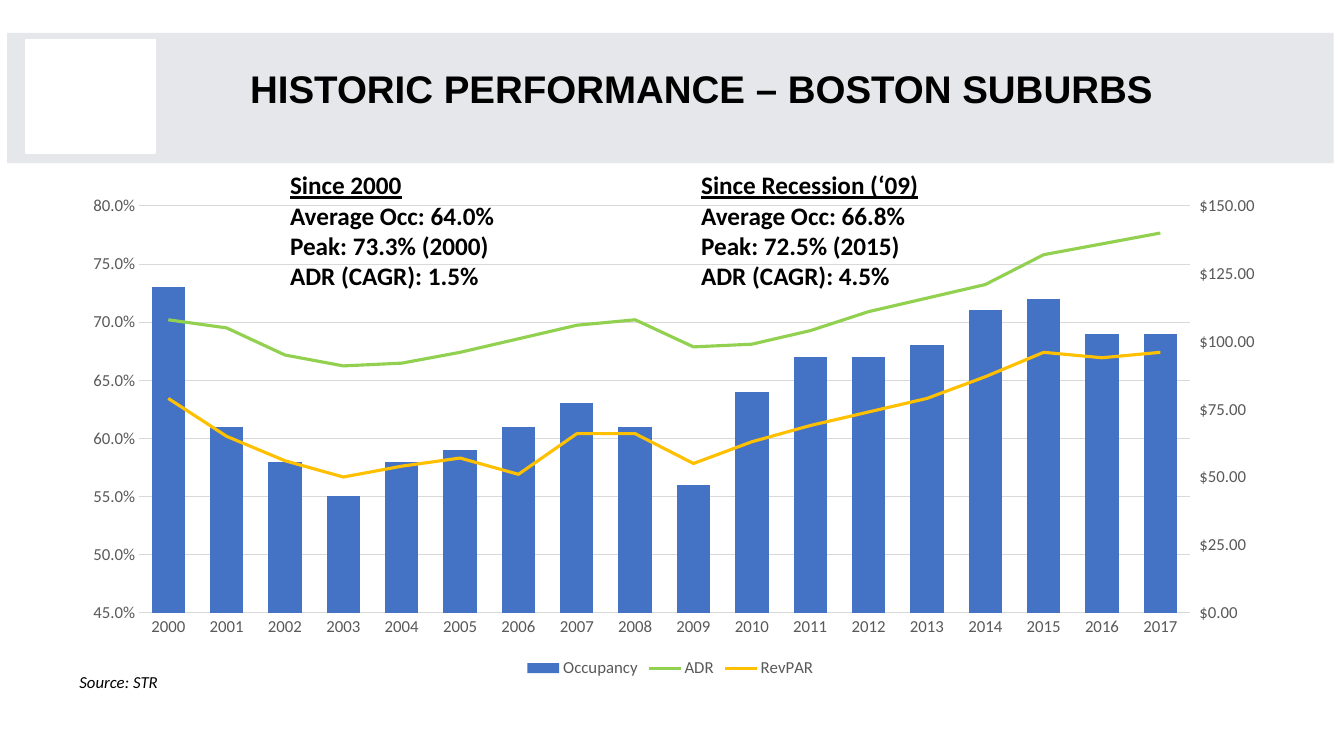
from copy import deepcopy

from lxml.etree import SubElement
from pptx import Presentation
from pptx.chart.axis import ValueAxis
from pptx.chart.data import CategoryChartData
from pptx.dml.color import RGBColor
from pptx.enum.chart import XL_CHART_TYPE, XL_LEGEND_POSITION, XL_MARKER_STYLE, XL_TICK_MARK
from pptx.enum.shapes import MSO_SHAPE
from pptx.enum.text import MSO_ANCHOR, MSO_AUTO_SIZE, PP_ALIGN
from pptx.oxml.ns import qn
from pptx.util import Cm, Pt

COLORS = {
    "band": "E6E7EA", "white": "FFFFFF", "text": "000000", "axis_text": "595959",
    "grid": "D9D9D9", "Occupancy": "4472C4", "ADR": "92D050", "RevPAR": "FFC000",
}
TITLE = "HISTORIC PERFORMANCE – BOSTON SUBURBS"
SOURCE = "Source: STR"
SUMMARIES = [
    (7.06, "Since 2000",
     ["Average Occ: 64.0%", "Peak: 73.3% (2000)", "ADR (CAGR): 1.5%"]),
    (17.42, "Since Recession (‘09)",
     ["Average Occ: 66.8%", "Peak: 72.5% (2015)", "ADR (CAGR): 4.5%"]),
]
YEARS = [str(year) for year in range(2000, 2018)]
SERIES = {
    "Occupancy": [0.73, 0.61, 0.58, 0.55, 0.58, 0.59, 0.61, 0.63, 0.61,
                  0.56, 0.64, 0.67, 0.67, 0.68, 0.71, 0.72, 0.69, 0.69],
    "ADR": [108, 105, 95, 91, 92, 96, 101, 106, 108,
            98, 99, 104, 111, 116, 121, 132, 136, 140],
    "RevPAR": [79, 65, 56, 50, 54, 57, 51, 66, 66,
               55, 63, 69, 74, 79, 87, 96, 94, 96],
}
PERCENT, DOLLARS = "0.0%", '"$"#,##0.00'
PLOT_AREA = {"x": 0.06, "y": 0.04, "w": 0.87, "h": 0.82}


def rgb(name):
    return RGBColor.from_string(COLORS[name])


def box(left, top, width, height):
    return Cm(left), Cm(top), Cm(width), Cm(height)


def add_rectangle(slide, place, color):
    shape = slide.shapes.add_shape(MSO_SHAPE.RECTANGLE, *place)
    shape.shadow.inherit = False
    shape.fill.solid()
    shape.fill.fore_color.rgb = rgb(color)
    shape.line.fill.background()
    return shape


def write(paragraph, text, size, font="Calibri", bold=False, italic=False, underline=False):
    paragraph.alignment = PP_ALIGN.LEFT
    run = paragraph.add_run()
    run.text = text
    run.font.name, run.font.size = font, Pt(size)
    run.font.bold, run.font.italic, run.font.underline = bold, italic, underline
    run.font.color.rgb = rgb("text")


def add_text_frame(slide, place):
    frame = slide.shapes.add_textbox(*place).text_frame
    frame.word_wrap = True
    frame.auto_size = MSO_AUTO_SIZE.SHAPE_TO_FIT_TEXT
    return frame


def style_font(font):
    font.name, font.size = "Calibri", Pt(12)
    font.color.rgb = rgb("axis_text")


def style_axis(axis):
    axis.major_tick_mark = axis.minor_tick_mark = XL_TICK_MARK.NONE
    style_font(axis.tick_labels.font)


def set_value(parent, tag, value):
    """Set the val of a child element, adding the child at the end if missing."""
    child = parent.find(qn(tag))
    if child is None:
        child = SubElement(parent, qn(tag))
    child.set("val", value)


def set_plot_layout(plot_area):
    for old in plot_area.findall(qn("c:layout")):
        plot_area.remove(old)
    layout = plot_area.makeelement(qn("c:layout"))
    plot_area.insert(0, layout)
    manual = SubElement(layout, qn("c:manualLayout"))
    set_value(manual, "c:layoutTarget", "inner")
    for side in "xy":
        set_value(manual, f"c:{side}Mode", "edge")
    for side, share in PLOT_AREA.items():
        set_value(manual, f"c:{side}", str(share))


def move_to_right_axis(chart):
    """Turn every series after the first into a line on a second value axis."""
    category, value = chart.category_axis._element, chart.value_axis._element
    bars = chart.plots[0]._element
    lines = bars.makeelement(qn("c:lineChart"))
    bars.addnext(lines)
    set_value(lines, "c:grouping", "standard")
    set_value(lines, "c:varyColors", "0")
    for series in bars.findall(qn("c:ser"))[1:]:
        for flag in series.findall(qn("c:invertIfNegative")):
            series.remove(flag)
        lines.append(series)
    set_value(lines, "c:marker", "1")

    right_category, right_value = deepcopy(category), deepcopy(value)
    value.addnext(right_value)
    right_value.addnext(right_category)
    for axis, own, other in ((right_category, "5001", "5002"), (right_value, "5002", "5001")):
        set_value(axis, "c:axId", own)
        set_value(axis, "c:crossAx", other)
        SubElement(lines, qn("c:axId")).set("val", own)
    set_value(right_category, "c:delete", "1")
    set_value(right_value, "c:axPos", "r")
    set_value(right_value, "c:crosses", "max")
    return ValueAxis(right_value)


def add_performance_chart(slide):
    data = CategoryChartData()
    data.categories = YEARS
    for name, values in SERIES.items():
        data.add_series(name, values, PERCENT if name == "Occupancy" else DOLLARS)
    chart = slide.shapes.add_chart(
        XL_CHART_TYPE.COLUMN_CLUSTERED, *box(1.68, 4.69, 30.43, 12.5), data).chart
    chart.has_title = False
    chart.font.name, chart.font.size = "Calibri", Pt(10)
    chart.has_legend = True
    chart.legend.position = XL_LEGEND_POSITION.BOTTOM
    chart.legend.include_in_layout = False
    style_font(chart.legend.font)

    category, left = chart.category_axis, chart.value_axis
    for axis in (category, left):
        style_axis(axis)
    category.format.line.color.rgb = rgb("grid")
    category.format.line.width = Pt(0.75)
    left.format.line.fill.background()
    left.minimum_scale, left.maximum_scale, left.major_unit = 0.45, 0.8, 0.05
    left.tick_labels.number_format = PERCENT
    left.tick_labels.number_format_is_linked = False

    right = move_to_right_axis(chart)
    right.has_major_gridlines = False
    right.major_tick_mark = XL_TICK_MARK.OUTSIDE
    right.minimum_scale, right.maximum_scale, right.major_unit = 0, 150, 25
    right.tick_labels.number_format = DOLLARS
    left.has_major_gridlines = True
    left.major_gridlines.format.line.color.rgb = rgb("grid")
    left.major_gridlines.format.line.width = Pt(0.75)

    columns, lines = chart.plots
    columns.gap_width = 75
    columns.vary_by_categories = False
    for series in columns.series:
        series.format.fill.solid()
        series.format.fill.fore_color.rgb = rgb(series.name)
    for series in lines.series:
        series.format.line.color.rgb = rgb(series.name)
        series.format.line.width = Pt(2.25)
        series.marker.style = XL_MARKER_STYLE.NONE
        series.smooth = False
    set_plot_layout(columns._element.getparent())


def main():
    presentation = Presentation()
    presentation.slide_width, presentation.slide_height = Cm(33.87), Cm(19.05)
    slide = presentation.slides.add_slide(presentation.slide_layouts[5])

    add_rectangle(slide, box(0.18, 0.83, 33.43, 3.28), "band")
    panel = add_rectangle(slide, box(0.66, 0.99, 3.25, 2.87), "white")
    panel.line.color.rgb = rgb("white")
    panel.line.width = Pt(1)

    title = slide.shapes.title
    panel._element.addnext(title._element)
    title.left, title.top, title.width, title.height = box(6.05, 1.83, 23.85, 1.63)
    title.text_frame.vertical_anchor = MSO_ANCHOR.TOP
    title.text_frame.auto_size = MSO_AUTO_SIZE.NONE
    heading = title.text_frame.paragraphs[0]
    heading.line_spacing = 0.7
    write(heading, TITLE, 27.5, font="Arial", bold=True)

    add_performance_chart(slide)

    for left, period, facts in SUMMARIES:
        frame = add_text_frame(slide, box(left, 4.15, 7.39, 3.33))
        write(frame.paragraphs[0], period, 18, bold=True, underline=True)
        for fact in facts:
            write(frame.add_paragraph(), fact, 18, bold=True)

    source = add_text_frame(slide, box(1.75, 16.81, 9.65, 0.76))
    write(source.paragraphs[0], SOURCE, 12, italic=True)
    presentation.save("out.pptx")


if __name__ == "__main__":
    main()
